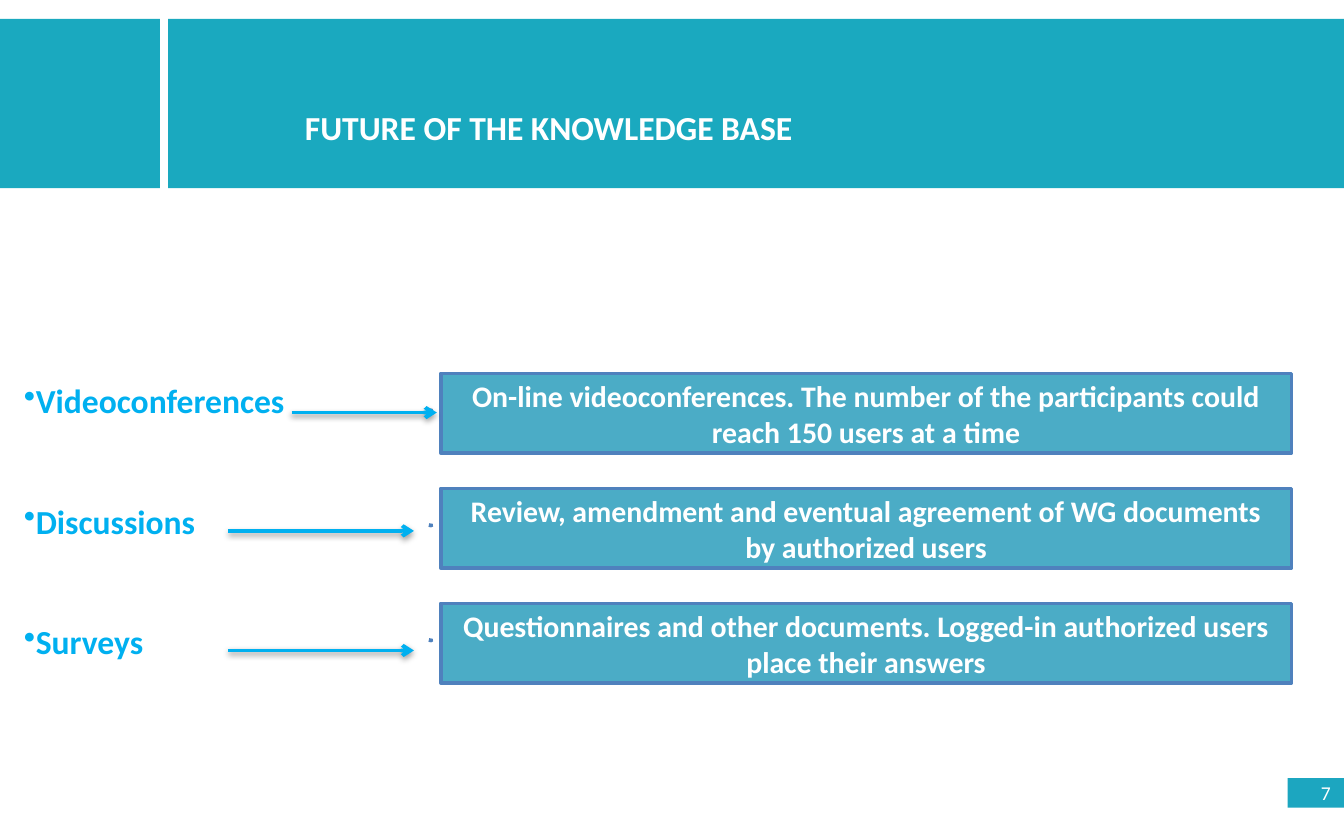
import pptx
import pptx.util
import pptx.dml.color
import pptx.enum.shapes
import pptx.enum.text
import pptx.oxml
import pptx.oxml.ns

SHAPE = pptx.enum.shapes.MSO_SHAPE
ALIGN = pptx.enum.text.PP_ALIGN
ANCHOR = pptx.enum.text.MSO_ANCHOR
Pt = pptx.util.Pt
NS = pptx.oxml.ns.nsdecls("a")

prs = pptx.Presentation()
prs.slide_width = pptx.util.Inches(10)
prs.slide_height = pptx.util.Inches(6.25)
s = prs.slides.add_slide(prs.slide_layouts[6])

# Grid of 100 columns by 62.5 rows
COL = prs.slide_width / 100
ROW = prs.slide_height / 62.5


def rgb(color):
    return pptx.dml.color.RGBColor.from_string(color)


def add_text(p, text, size, color, bold=True):
    r = p.add_run()
    r.text = text
    r.font.name = "Calibri"
    r.font.size = Pt(size)
    r.font.bold = bold
    r.font.color.rgb = rgb(color)


# Header blocks and page number block
blocks = [
    (12.5, 1.4, 87.5, 12.6, "1AA9BF", ""),
    (0, 1.4, 11.9, 12.6, "1AA9BF", ""),
    (95.8, 57.9, 4.2, 2.2, "1CA6C0", "7"),
]
for x, y, w, h, fill, text in blocks:
    sp = s.shapes.add_shape(SHAPE.RECTANGLE, int(x * COL), int(y * ROW), int(w * COL), int(h * ROW))
    sp.shadow.inherit = False
    sp.fill.solid()
    sp.fill.fore_color.rgb = rgb(fill)
    sp.line.fill.background()
    if text:
        sp.text_frame.vertical_anchor = ANCHOR.MIDDLE
        p = sp.text_frame.paragraphs[0]
        p.alignment = ALIGN.RIGHT
        add_text(p, text, 10.5, "FFFFFF", bold=False)

# Title
sp = s.shapes.add_textbox(int(21.7 * COL), int(7.5 * ROW), int(49.8 * COL), int(4 * ROW))
sp.text_frame.word_wrap = True
add_text(sp.text_frame.paragraphs[0], "FUTURE OF THE KNOWLEDGE BASE", 18, "FFFFFF")

# Topic, arrow start and end columns, arrow row, description
topics = [
    ("Videoconferences", 21.7, 32.5, 30.7,
     "On-line videoconferences. The number of the participants could reach 150 users at a time"),
    ("Discussions", 17, 30.8, 39.5,
     "Review, amendment and eventual agreement of WG documents by authorized users"),
    ("Surveys", 17, 30.8, 48.4,
     "Questionnaires and other documents. Logged-in authorized users place their answers"),
]

# Bulleted topic list
sp = s.shapes.add_textbox(int(0.8 * COL), int(27.8 * ROW), int(33.6 * COL), int(34.3 * ROW))
tf = sp.text_frame
tf.word_wrap = True
for i, topic in enumerate(topics):
    p = tf.add_paragraph() if i else tf.paragraphs[0]
    if i:
        p.space_before = Pt(43)
    p._p.get_or_add_pPr().append(pptx.oxml.parse_xml(f'<a:buChar {NS} char="•"/>'))
    add_text(p, topic[0], 18, "00B0F0")

# Description callouts
for i, topic in enumerate(topics):
    sp = s.shapes.add_shape(SHAPE.LINE_CALLOUT_2, int(32.8 * COL), int((27.8 + 8.55 * i) * ROW),
                            int(63.3 * COL), int(5.9 * ROW))
    for j, value in enumerate([0.46, -0.014, 0.467, -0.011, 0.456, -0.012]):
        sp.adjustments[j] = value
    sp.shadow.inherit = False
    sp.fill.solid()
    sp.fill.fore_color.rgb = rgb("4BACC6")
    sp.line.color.rgb = rgb("4F81BD")
    sp.line.width = Pt(2)
    tf = sp.text_frame
    tf.word_wrap = True
    tf.vertical_anchor = ANCHOR.MIDDLE
    p = tf.paragraphs[0]
    p.alignment = ALIGN.CENTER
    add_text(p, topic[4], 16, "FFFFFF")

# Arrows with a soft shadow
for _, x1, x2, y, _ in topics:
    cx = s.shapes.add_connector(pptx.enum.shapes.MSO_CONNECTOR.STRAIGHT,
                                int(x1 * COL), int(y * ROW), int(x2 * COL), int(y * ROW))
    cx.line.color.rgb = rgb("00B0F0")
    cx.line.width = Pt(2)
    cx.line._get_or_add_ln().append(pptx.oxml.parse_xml(f'<a:tailEnd {NS} type="arrow"/>'))
    cx._element.spPr.append(pptx.oxml.parse_xml(
        f'<a:effectLst {NS}><a:outerShdw blurRad="40000" dist="20000" dir="5400000" rotWithShape="0">'
        '<a:srgbClr val="000000"><a:alpha val="38000"/></a:srgbClr></a:outerShdw></a:effectLst>'))

prs.save("out.pptx")
